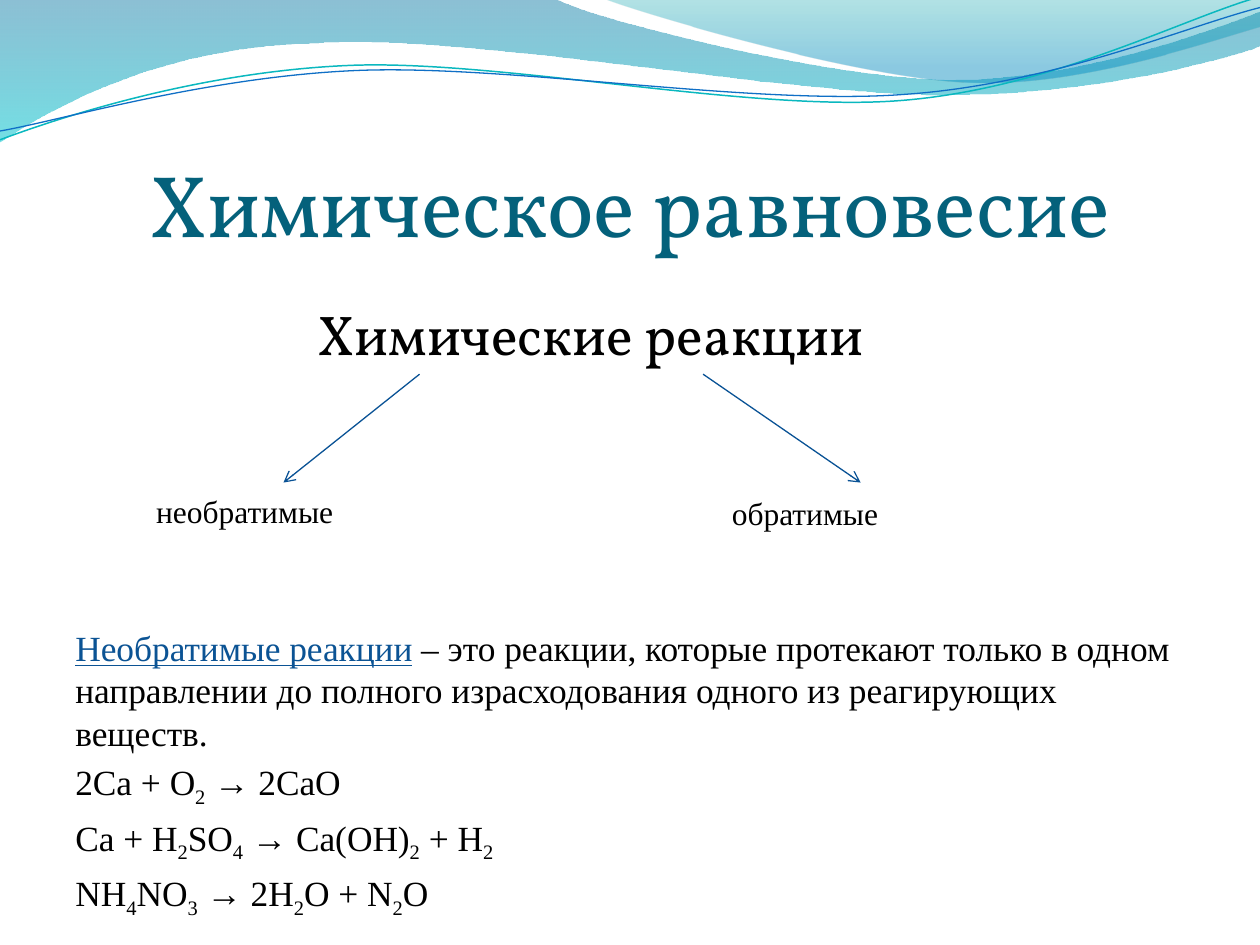
from lxml.etree import SubElement
from pptx import Presentation
from pptx.dml.color import RGBColor
from pptx.enum.shapes import MSO_CONNECTOR as Connector
from pptx.enum.text import MSO_ANCHOR as Anchor, PP_ALIGN as Align
from pptx.oxml.ns import qn
from pptx.util import Inches, Pt

WIDTH, HEIGHT = 10, 7.5
SERIF, DISPLAY = "Times New Roman", "Vollkorn"
BLACK, TEAL, BLUE, ARROW_BLUE = "000000", "04617B", "0B5394", "095295"
UNITS = 100  # outline units to the inch

# Waves: a start point, then straight (2 numbers) or cubic (6 numbers) segments
WIDE_WAVE = [
    (0, 0), (4.4, -0.01), (4.76, 0.17, 6.64, 0.63, 7.58, 0.63),
    (8.53, 0.63, 9.58, 0.26, 10, 0.09), (10.01, 0.36),
    (9.83, 0.44, 8.7, 0.76, 7.46, 0.75), (6.22, 0.75, 3.82, 0.28, 2.57, 0.34),
    (1.29, 0.36, 0.46, 0.83, -0.01, 1.13),
]
RIGHT_WAVE = [
    (4.79, -0.01), (5.09, 0.11, 6.82, 0.62, 7.69, 0.65),
    (8.56, 0.69, 9.61, 0.32, 10, 0.21), (10, 0),
]
TEAL_CURVE = [
    (0, 1.11), (0.48, 0.93, 1.58, 0.57, 2.77, 0.52),
    (3.95, 0.47, 5.93, 0.89, 7.13, 0.8), (8.33, 0.71, 9.38, 0.15, 9.98, -0.02),
]
BLUE_CURVE = [
    (0, 1.04), (0.47, 0.96, 1.64, 0.61, 2.83, 0.56),
    (4.03, 0.51, 5.97, 0.84, 7.17, 0.75), (8.36, 0.67, 9.41, 0.21, 10, 0.06),
]

# Equations: pieces alternate between the baseline and the subscript
EQUATIONS = [
    ["2Са + O", "2", " → 2СаО"],
    ["Са + Н", "2", "SO", "4", " → Ca(OH)", "2", " + H", "2"],
    ["NH", "4", "NO", "3", " → 2H", "2", "O + N", "2", "O"],
]


def color(value):
    return RGBColor.from_string(value)


def apply(target, values):
    for name, value in values.items():
        setattr(target, name, value)


def add_outline(slide, segments, close):
    """Join the segments' end points, then bend the cubic ones."""
    segments = [[round(n * UNITS) for n in segment] for segment in segments]
    ends = [segment[-2:] for segment in segments]
    builder = slide.shapes.build_freeform(*ends[0], scale=Inches(1) / UNITS)
    builder.add_line_segments(ends[1:], close=close)
    shape = builder.convert_to_shape()
    shape.shadow.inherit = False

    left, top = (min(axis) for axis in zip(*ends))
    lines = list(shape._element.iter(qn("a:lnTo")))
    for line, segment in zip(lines, segments[1:]):
        if len(segment) == 6:
            curve = line.getparent().makeelement(qn("a:cubicBezTo"))
            for x, y in zip(segment[::2], segment[1::2]):
                SubElement(curve, qn("a:pt"), x=str(x - left), y=str(y - top))
            line.getparent().replace(line, curve)
    return shape


def add_wave(slide, segments, stops):
    """Filled wave; each stop is (position, colour, opacity in percent)."""
    shape = add_outline(slide, segments, True)
    shape.line.fill.background()
    shape.fill.gradient()
    shape.fill.gradient_angle = 270
    for stop, (position, value, _) in zip(shape.fill.gradient_stops, stops):
        stop.position = position
        stop.color.rgb = color(value)
    for node, (_, _, opacity) in zip(shape._element.spPr.iter(qn("a:srgbClr")), stops):
        SubElement(node, qn("a:alpha"), val=str(opacity * 1000))


def add_curve(slide, segments, value, width):
    shape = add_outline(slide, segments, False)
    shape.fill.background()
    shape.line.color.rgb = color(value)
    shape.line.width = Pt(width)


def add_arrow(slide, start, end):
    arrow = slide.shapes.add_connector(
        Connector.STRAIGHT, *(Inches(length) for length in (*start, *end)))
    arrow.line.color.rgb = color(ARROW_BLUE)
    arrow.line.width = Pt(0.75)
    SubElement(arrow.line._get_or_add_ln(), qn("a:tailEnd"), type="arrow")
    SubElement(arrow._element.spPr, qn("a:effectLst"))


def add_box(slide, left, top, width, height, **frame_format):
    shape = slide.shapes.add_textbox(*(Inches(n) for n in (left, top, width, height)))
    apply(shape.text_frame, {"word_wrap": True, **frame_format})
    return shape.text_frame


def add_run(paragraph, text, size, font=SERIF, value=BLACK, subscript=False, **font_format):
    run = paragraph.add_run()
    run.text = text
    apply(run.font, {"name": font, "size": Pt(size), **font_format})
    run.font.color.rgb = color(value)
    if subscript:
        run.font._element.set("baseline", "-25000")


def add_definition(slide):
    size = 20.2
    frame = add_box(slide, 0.05 * WIDTH, 4.92, 0.9 * WIDTH, 2)
    paragraph = frame.paragraphs[0]
    add_run(paragraph, "Необратимые реакции", size, value=BLUE, underline=True)
    add_run(paragraph, " – это реакции, которые протекают только в одном направлении "
            "до полного израсходования одного из реагирующих веществ.", size)
    for pieces in EQUATIONS:
        paragraph = frame.add_paragraph()
        paragraph.space_before = Pt(4)
        for index, piece in enumerate(pieces):
            add_run(paragraph, piece, size, subscript=index % 2 == 1)


def main():
    presentation = Presentation()
    apply(presentation, {"slide_width": Inches(WIDTH), "slide_height": Inches(HEIGHT)})
    slide = presentation.slides.add_slide(presentation.slide_layouts[6])

    # Waves along the top edge
    add_wave(slide, WIDE_WAVE, [(0, "0074A1", 45), (1, "00C6CF", 55)])
    add_wave(slide, RIGHT_WAVE, [(0, "00A1A9", 30), (0.8, "008BBF", 45)])
    add_curve(slide, TEAL_CURVE, "0AB8BF", 0.85)
    add_curve(slide, BLUE_CURVE, "0F6FC6", 0.75)

    # Title
    title = add_box(slide, 0.05 * WIDTH, 0.77, 0.9 * WIDTH, 1.25, margin_left=0,
                    margin_right=0, margin_bottom=0, vertical_anchor=Anchor.BOTTOM)
    title.paragraphs[0].alignment = Align.CENTER
    add_run(title.paragraphs[0], "Химическое равновесие", 50, DISPLAY, TEAL)

    # Definition and equations
    add_definition(slide)

    # Two kinds of reactions
    heading = add_box(slide, 2.42, 2.33, 4.56, 0.64, word_wrap=False)
    add_run(heading.paragraphs[0], "Химические реакции", 32, DISPLAY)
    branches = [("необратимые", 1.14, 3.86, 3.33, 2.25),
                ("обратимые", 5.71, 3.87, 5.58, 6.83)]
    for text, left, top, start, end in branches:
        add_arrow(slide, (start, 2.97), (end, 3.83))
        label = add_box(slide, left, top, 2.52, 0.4)
        add_run(label.paragraphs[0], text, 18)

    presentation.save("out.pptx")


if __name__ == "__main__":
    main()
